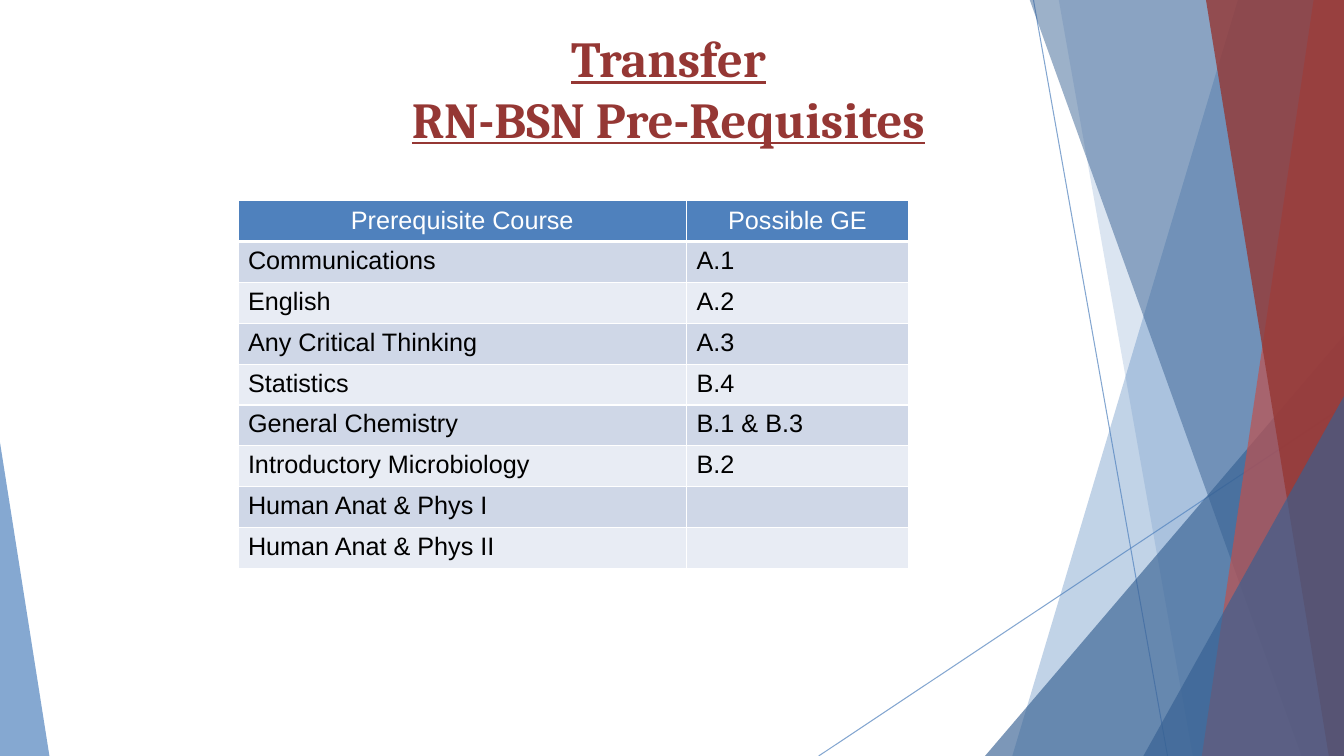
from lxml import etree
from pptx import Presentation
from pptx.dml.color import RGBColor
from pptx.enum.shapes import MSO_CONNECTOR, MSO_SHAPE
from pptx.enum.text import MSO_ANCHOR, PP_ALIGN
from pptx.oxml.ns import qn
from pptx.util import Inches, Pt

STRAIGHT = MSO_CONNECTOR.STRAIGHT
TRIANGLE = MSO_SHAPE.ISOSCELES_TRIANGLE
CENTER, LEFT = PP_ALIGN.CENTER, PP_ALIGN.LEFT
TOP, MIDDLE = MSO_ANCHOR.TOP, MSO_ANCHOR.MIDDLE

WIDTH, HEIGHT = 13.33, 7.5
BLUE, NAVY, RED, MAROON = "4F81BD", "366092", "C0504D", "953734"
BAND_COLORS = ("CFD7E7", "E8ECF4")

COURSES = [
    ("Prerequisite Course", "Possible GE"),
    ("Communications", "A.1"),
    ("English", "A.2"),
    ("Any Critical Thinking", "A.3"),
    ("Statistics", "B.4"),
    ("General Chemistry", "B.1 & B.3"),
    ("Introductory Microbiology", "B.2"),
    ("Human Anat & Phys I", ""),
    ("Human Anat & Phys II", ""),
]


def rgb(color):
    return RGBColor.from_string(color)


def set_opacity(parent, percent):
    """Make the solid colour inside an XML element partly transparent."""
    color = parent.find(f"{qn('a:solidFill')}/{qn('a:srgbClr')}")
    etree.SubElement(color, qn("a:alpha"), val=str(percent * 1000))


def paint(shape, color, opacity):
    shape.shadow.inherit = False
    shape.fill.solid()
    shape.fill.fore_color.rgb = rgb(color)
    set_opacity(shape.element.spPr, opacity)
    shape.line.fill.background()


def add_thin_line(slide, start, end):
    line = slide.shapes.add_connector(
        STRAIGHT, *(Inches(value) for value in (*start, *end)))
    line.line.color.rgb = rgb(BLUE)
    line.line.width = Pt(0.75)
    properties = line.element.spPr
    set_opacity(properties.find(qn("a:ln")), 69)
    etree.SubElement(properties, qn("a:effectLst"))


def add_ribbon(slide, top_left, bottom_left, color, opacity):
    """Add a full-height band that reaches the right edge of the slide."""
    top = -0.01
    corners = [(WIDTH, top), (WIDTH, HEIGHT), (bottom_left, HEIGHT)]
    builder = slide.shapes.build_freeform(Inches(top_left), Inches(top))
    builder.add_line_segments([(Inches(x), Inches(y)) for x, y in corners], close=True)
    paint(builder.convert_to_shape(), color, opacity)


def add_corner(slide, left, width, height, apex, color, opacity):
    """Add a right triangle that stands on the bottom edge of the slide."""
    corner = slide.shapes.add_shape(
        TRIANGLE, Inches(left), Inches(HEIGHT - height), Inches(width), Inches(height))
    corner.adjustments[0] = apex
    paint(corner, color, opacity)


def write(frame, text, *, font, size, color, align=LEFT, bold=False, underline=False):
    for index, line in enumerate(text.split("\n")):
        paragraph = frame.paragraphs[0] if index == 0 else frame.add_paragraph()
        paragraph.alignment = align
        run = paragraph.add_run()
        run.text = line
        run.font.name = font
        run.font.size = Pt(size)
        run.font.color.rgb = rgb(color)
        run.font.bold = bold
        run.font.underline = underline


def set_borders(cell, widths):
    """Draw white borders; widths are points for left, right, top and bottom."""
    properties = cell._tc.get_or_add_tcPr()
    for position, (side, points) in enumerate(zip("LRTB", widths)):
        border = etree.Element(qn(f"a:ln{side}"), w=str(Pt(points)))
        fill = etree.SubElement(border, qn("a:solidFill"))
        etree.SubElement(fill, qn("a:srgbClr"), val="FFFFFF")
        properties.insert(position, border)


def add_backdrop(slide):
    add_thin_line(slide, (10.25, 0), (11.58, HEIGHT))
    add_thin_line(slide, (WIDTH, 4.03), (8.12, HEIGHT))
    add_ribbon(slide, 12.28, 10.04, BLUE, 35)
    add_ribbon(slide, 10.5, 11.83, BLUE, 20)
    add_corner(slide, 9.77, 3.56, 4.17, 1, NAVY, 65)
    add_ribbon(slide, 10.21, 12.91, NAVY, 49)
    add_ribbon(slide, 13.03, 11.92, RED, 69)
    add_ribbon(slide, 11.96, 13.18, MAROON, 80)
    add_corner(slide, 11.34, 1.99, 3.57, 1, NAVY, 65)
    add_corner(slide, 0, 0.49, 3.11, 0, BLUE, 69)


def add_title(slide, text):
    title = slide.shapes.add_textbox(
        Inches(1.23), Inches(0.22), Inches(10.8), Inches(1.48))
    title.text_frame.word_wrap = True
    write(title.text_frame, text, font="Cambria", size=36, color=MAROON,
          align=CENTER, bold=True, underline=True)


def add_course_table(slide, courses):
    table = slide.shapes.add_table(
        len(courses), 2, Inches(2.36), Inches(1.99), Inches(6.65), Inches(3.65)).table
    for column, width in zip(table.columns, (4.45, 2.2)):
        column.width = Inches(width)

    for row, course in enumerate(courses):
        header = row == 0
        for column, text in enumerate(course):
            cell = table.cell(row, column)
            cell.fill.solid()
            cell.fill.fore_color.rgb = rgb(BLUE if header else BAND_COLORS[(row - 1) % 2])
            cell.vertical_anchor = MIDDLE if header else TOP
            set_borders(cell, (1, 1, 3 if row == 1 else 1, 3 if header else 1))
            if text:
                write(cell.text_frame, text, font="Arial", size=18,
                      color="FFFFFF" if header else "000000",
                      align=CENTER if header else LEFT)


def main():
    presentation = Presentation()
    presentation.slide_width = Inches(WIDTH)
    presentation.slide_height = Inches(HEIGHT)
    slide = presentation.slides.add_slide(presentation.slide_layouts[6])

    # Angled bands along the edges
    add_backdrop(slide)

    # Heading and course list
    add_title(slide, "Transfer\nRN-BSN Pre-Requisites")
    add_course_table(slide, COURSES)

    presentation.save("out.pptx")


if __name__ == "__main__":
    main()
